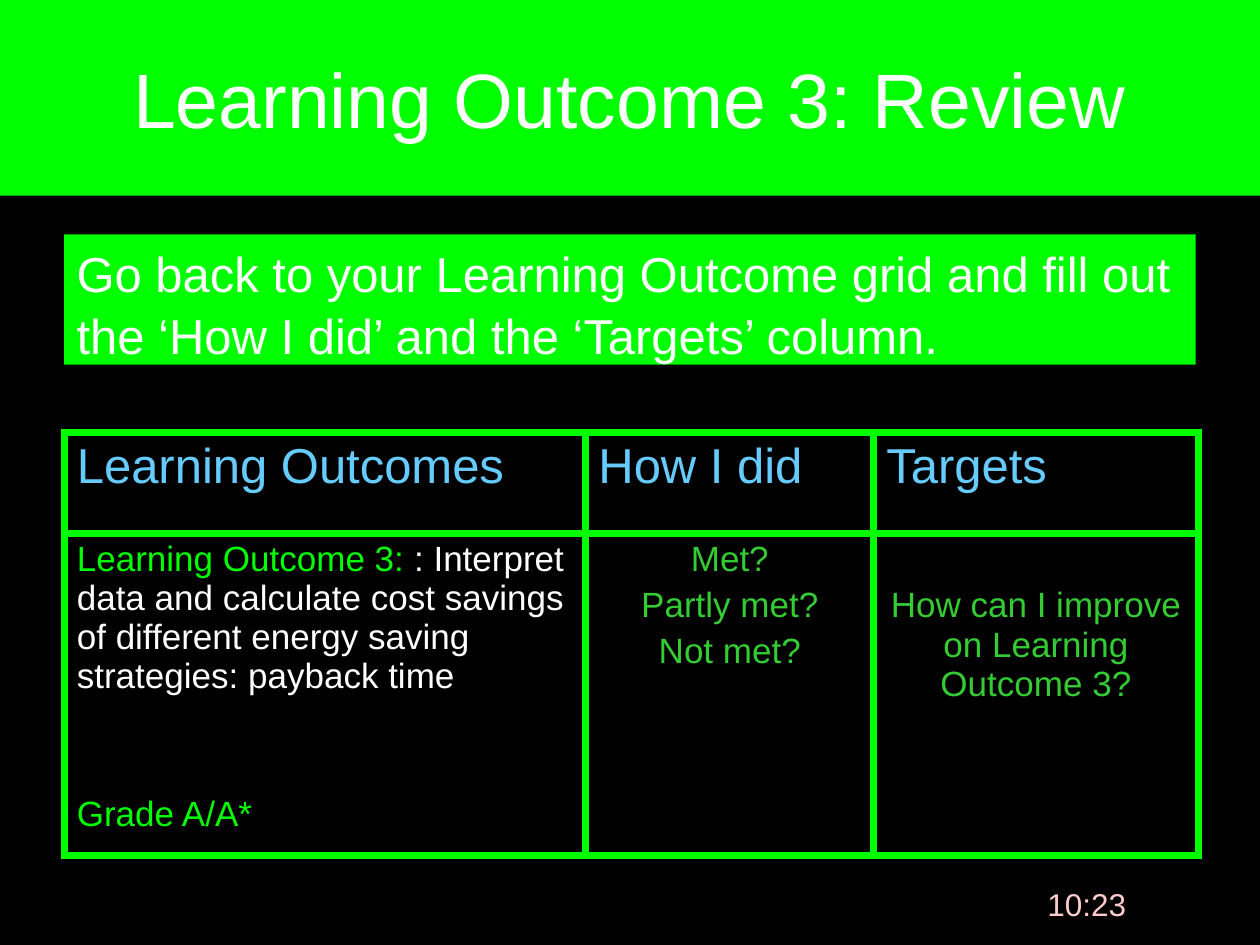
from lxml.etree import SubElement
from pptx import Presentation
from pptx.dml.color import RGBColor
from pptx.enum.shapes import MSO_SHAPE
from pptx.enum.text import MSO_ANCHOR, PP_ALIGN
from pptx.oxml.ns import qn
from pptx.util import Inches, Pt

BLACK = RGBColor(0, 0, 0)
WHITE = RGBColor(255, 255, 255)
LIME = RGBColor(0, 255, 0)
GREEN = RGBColor(0x33, 0xCC, 0x33)
SKY = RGBColor(0x66, 0xCC, 0xFF)
PINK = RGBColor(0xFF, 0xCC, 0xCC)
WIDE, HIGH = Inches(10), Inches(7.5)
LEFT = PP_ALIGN.LEFT
MID = PP_ALIGN.CENTER


def share(left, top, width, height):
    return [int(part * side) for part, side in
            zip((left, top, width, height), (WIDE, HIGH) * 2)]


def put(item, values):
    for name, value in values.items():
        setattr(item, name, value)


def paint(item, color):
    item.fill.solid()
    item.fill.fore_color.rgb = color


def write(frame, lines, size, align=LEFT, gap=0):
    frame.word_wrap = True
    for i, runs in enumerate(lines):
        para = frame.paragraphs[0] if i == 0 else frame.add_paragraph()
        put(para, {"alignment": align, "space_before": Pt(gap if i else 0)})
        for text, color in runs:
            run = para.add_run()
            run.text = text
            put(run.font, {"name": "Arial", "size": Pt(size), "bold": False})
            run.font.color.rgb = color


def edge(cell):
    props = cell._tc.get_or_add_tcPr()
    for side in ("a:lnL", "a:lnR", "a:lnT", "a:lnB"):
        line = SubElement(props, qn(side), w=str(Pt(4.5)))
        fill = SubElement(line, qn("a:solidFill"))
        SubElement(fill, qn("a:srgbClr"), val=str(LIME))


def add_title(slide, box):
    title = slide.shapes.title
    put(title, dict(zip(("left", "top", "width", "height"), box)))
    paint(title, LIME)
    title.text_frame.vertical_anchor = MSO_ANCHOR.MIDDLE
    write(title.text_frame, [[("Learning Outcome 3: Review", WHITE)]], 44, MID)


def add_task(slide, box):
    task = slide.shapes.add_shape(MSO_SHAPE.RECTANGLE, *box)
    task.shadow.inherit = False
    paint(task, LIME)
    task.line.fill.background()
    task.text_frame.vertical_anchor = MSO_ANCHOR.TOP
    write(task.text_frame, [[("Go back to your Learning Outcome grid and fill out "
                              "the ‘How I did’ and the ‘Targets’ column.", WHITE)]], 28)
    task.text_frame.paragraphs[0].line_spacing = 1.05


def add_grid(slide, box):
    grid = slide.shapes.add_table(2, 3, *box).table
    put(grid, {"first_row": False, "horz_banding": False})
    for col, part in zip(grid.columns, (0.46, 0.254, 0.286)):
        col.width = int(box[2] * part)
    for row, part in zip(grid.rows, (0.247, 0.753)):
        row.height = int(box[3] * part)
    for cell in grid.iter_cells():
        edge(cell)
        paint(cell, BLACK)
    heads = ("Learning Outcomes", "How I did", "Targets")
    for col, text in enumerate(heads):
        write(grid.cell(0, col).text_frame, [[(text, SKY)]], 28)
    goal, score, target = (grid.cell(1, col) for col in range(3))
    write(goal.text_frame, [
        [("Learning Outcome 3: ", LIME),
         (": Interpret data and calculate cost savings of different "
          "energy saving strategies: payback time", WHITE)],
        [("Grade A/A*", LIME)]], 20, gap=56.6)
    write(score.text_frame, [[(text, GREEN)] for text in
                             ("Met?", "Partly met?", "Not met?")], 20, MID, 4)
    target.margin_top = Inches(0.42)
    write(target.text_frame,
          [[("How can I improve on Learning Outcome 3?", GREEN)]], 20, MID)


def add_clock(slide, box):
    clock = slide.shapes.add_textbox(*box)
    write(clock.text_frame, [[("10:23", PINK)]], 18, MID)


def main():
    deck = Presentation()
    put(deck, {"slide_width": WIDE, "slide_height": HIGH})
    slide = deck.slides.add_slide(deck.slide_layouts[5])
    paint(slide.background, BLACK)
    add_clock(slide, share(0.784, 0.93, 0.157, 0.07))
    add_title(slide, share(0, 0, 1, 0.207))
    add_grid(slide, share(0.051, 0.458, 0.9, 0.431))
    add_task(slide, share(0.051, 0.248, 0.898, 0.138))
    deck.save("out.pptx")


if __name__ == "__main__":
    main()
